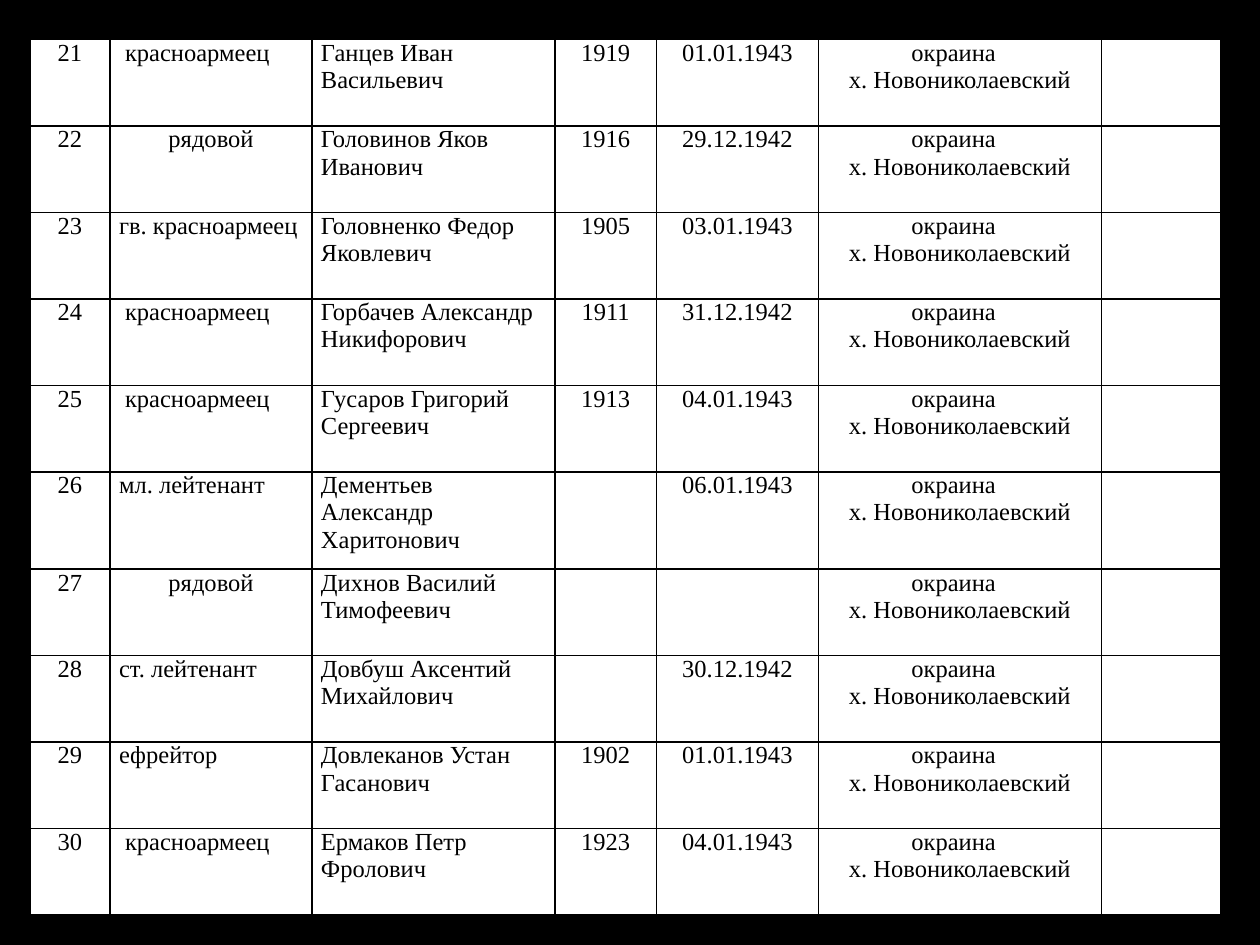
from typing import NamedTuple

from lxml.etree import SubElement
from pptx import Presentation
from pptx.dml.color import RGBColor
from pptx.enum.text import PP_ALIGN as Align
from pptx.oxml.ns import qn
from pptx.util import Cm, Pt

BLACK = RGBColor(0, 0, 0)
WHITE = RGBColor(255, 255, 255)
FONT = "Times New Roman"

TABLE_LEFT, TABLE_TOP, TABLE_HEIGHT = 0.6, 0.8, 17.65
COLUMN_WIDTHS = (1.62, 4.07, 4.9, 2.04, 3.27, 5.7, 2.4)
TALL_ROW = 5
TALL_HEIGHT = 1.96
SIDE_MARGIN = 0.18
RANK_INDENT = 0.12
PLACE_SHIFT = 0.25
PLACE = ("окраина", "х. Новониколаевский")


class Soldier(NamedTuple):
    number: int
    rank: str
    name: str
    born: str
    died: str


SOLDIERS = (
    Soldier(21, "красноармеец", "Ганцев Иван Васильевич", "1919", "01.01.1943"),
    Soldier(22, "рядовой", "Головинов Яков Иванович", "1916", "29.12.1942"),
    Soldier(23, "гв. красноармеец", "Головненко Федор Яковлевич", "1905", "03.01.1943"),
    Soldier(24, "красноармеец", "Горбачев Александр Никифорович", "1911", "31.12.1942"),
    Soldier(25, "красноармеец", "Гусаров Григорий Сергеевич", "1913", "04.01.1943"),
    Soldier(26, "мл. лейтенант", "Дементьев Александр Харитонович", "", "06.01.1943"),
    Soldier(27, "рядовой", "Дихнов Василий Тимофеевич", "", ""),
    Soldier(28, "ст. лейтенант", "Довбуш Аксентий Михайлович", "", "30.12.1942"),
    Soldier(29, "ефрейтор", "Довлеканов Устан Гасанович", "1902", "01.01.1943"),
    Soldier(30, "красноармеец", "Ермаков Петр Фролович", "1923", "04.01.1943"),
)


def style_cell(cell) -> None:
    """Give a cell its margins, black borders and white fill."""
    cell.margin_left = cell.margin_right = Cm(SIDE_MARGIN)
    cell.margin_top = cell.margin_bottom = 0
    properties = cell._tc.get_or_add_tcPr()
    for side in ("a:lnL", "a:lnR", "a:lnT", "a:lnB"):
        line = SubElement(properties, qn(side), w=str(Pt(1)))
        fill = SubElement(line, qn("a:solidFill"))
        SubElement(fill, qn("a:srgbClr"), val=str(BLACK))
    cell.fill.solid()
    cell.fill.fore_color.rgb = WHITE


def write_text(paragraph, text: str, *, align: Align = Align.LEFT,
               indent: float = 0, size: float = 14) -> None:
    """Write one formatted paragraph, with its left indent in centimetres."""
    paragraph.alignment = align
    if indent:
        paragraph._p.get_or_add_pPr().set("marL", str(Cm(indent)))
    run = paragraph.add_run()
    run.text = text
    run.font.name = FONT
    run.font.size = Pt(size)
    run.font.color.rgb = BLACK


def write_place(cell) -> None:
    """Centre the first line slightly to the left of the second one."""
    cell.margin_right = Cm(SIDE_MARGIN + PLACE_SHIFT)
    frame = cell.text_frame
    write_text(frame.paragraphs[0], PLACE[0], align=Align.CENTER)
    write_text(frame.add_paragraph(), PLACE[1], align=Align.CENTER, indent=PLACE_SHIFT)


def fill_row(cells: list, soldier: Soldier) -> None:
    for cell in cells:
        style_cell(cell)
    for column, value in enumerate(soldier):
        if not value:
            continue
        centred = column in (0, 3, 4) or value == "рядовой"
        write_text(cells[column].text_frame.paragraphs[0], str(value),
                   align=Align.CENTER if centred else Align.LEFT,
                   indent=RANK_INDENT if value == "красноармеец" else 0)
    write_place(cells[5])


def add_soldier_table(slide) -> None:
    shape = slide.shapes.add_table(
        len(SOLDIERS), len(COLUMN_WIDTHS), Cm(TABLE_LEFT), Cm(TABLE_TOP),
        Cm(sum(COLUMN_WIDTHS)), Cm(TABLE_HEIGHT))
    table = shape.table
    table.first_row = table.horz_banding = False
    for column, width in zip(table.columns, COLUMN_WIDTHS):
        column.width = Cm(width)
    row_height = (TABLE_HEIGHT - TALL_HEIGHT) / (len(SOLDIERS) - 1)
    for index, (row, soldier) in enumerate(zip(table.rows, SOLDIERS)):
        row.height = Cm(TALL_HEIGHT if index == TALL_ROW else row_height)
        fill_row(list(row.cells), soldier)


def main() -> None:
    presentation = Presentation()
    presentation.slide_width, presentation.slide_height = Cm(25.4), Cm(19.05)
    slide = presentation.slides.add_slide(presentation.slide_layouts[6])

    # Black background
    slide.background.fill.solid()
    slide.background.fill.fore_color.rgb = BLACK

    # List of soldiers
    add_soldier_table(slide)
    presentation.save("out.pptx")


if __name__ == "__main__":
    main()
